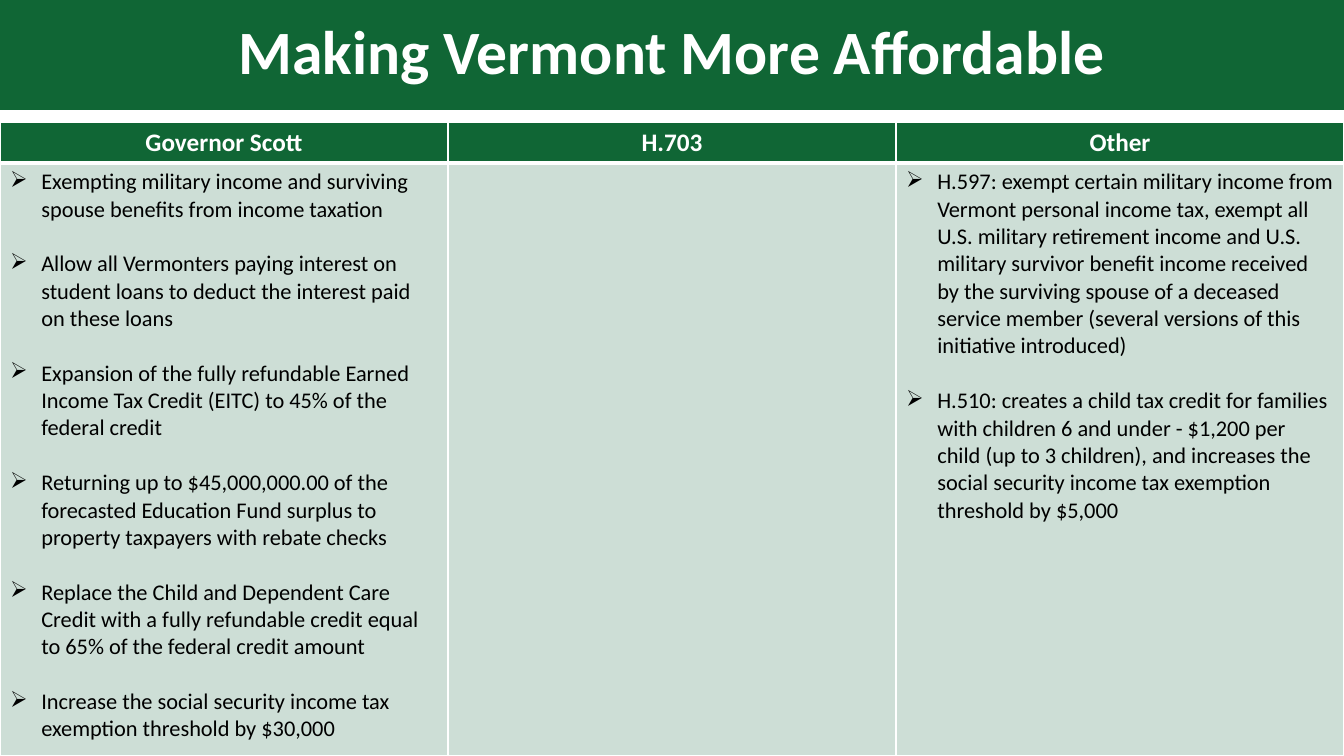
from pptx import Presentation
from pptx.dml.color import RGBColor
from pptx.enum.shapes import MSO_SHAPE
from pptx.enum.text import MSO_ANCHOR, PP_ALIGN
from pptx.oxml.ns import qn
from pptx.util import Inches, Pt
from lxml import etree

RECT = MSO_SHAPE.RECTANGLE
MIDDLE = MSO_ANCHOR.MIDDLE
CENTER, LEFT = PP_ALIGN.CENTER, PP_ALIGN.LEFT

GREEN = RGBColor(0x10, 0x66, 0x35)
PALE_GREEN = RGBColor(0xCD, 0xDE, 0xD6)
WHITE = RGBColor(0xFF, 0xFF, 0xFF)
BLACK = RGBColor(0x00, 0x00, 0x00)

WIDTH, HEIGHT = 13.33, 7.5
TABLE_TOP, HEADER_HEIGHT = 1.21, 0.41

TITLE = {"size": Pt(44), "bold": True, "color": WHITE}
HEADER = {"size": Pt(18), "bold": True, "color": WHITE}
BODY = {"size": Pt(16), "bold": False, "color": BLACK}

COLUMNS = {
    "Governor Scott": [
        "Exempting military income and surviving spouse benefits from income taxation",
        "Allow all Vermonters paying interest on student loans to deduct the interest "
        "paid on these loans",
        "Expansion of the fully refundable Earned Income Tax Credit (EITC) to 45% of "
        "the federal credit",
        "Returning up to $45,000,000.00 of the forecasted Education Fund surplus to "
        "property taxpayers with rebate checks",
        "Replace the Child and Dependent Care Credit with a fully refundable credit "
        "equal to 65% of the federal credit amount",
        "Increase the social security income tax exemption threshold by $30,000",
    ],
    "H.703": [],
    "Other": [
        "H.597: exempt certain military income from Vermont personal income tax, exempt "
        "all U.S. military retirement income and U.S. military survivor benefit income "
        "received by the surviving spouse of a deceased service member (several versions "
        "of this initiative introduced)",
        "H.510: creates a child tax credit for families with children 6 and under - "
        "$1,200 per child (up to 3 children), and increases the social security income "
        "tax exemption threshold by $5,000",
    ],
}


class SlideBuilder:
    font_name = "Calibri"
    bullet = "➢"
    bullet_indent = Inches(0.31)
    bullet_gap = Pt(19.5)

    def __init__(self, slide):
        self.s = slide

    def text(self, p, text, style, align):
        p.alignment = align
        r = p.add_run()
        r.text = text
        r.font.name = self.font_name
        for name, value in style.items():
            if name == "color":
                r.font.color.rgb = value
            else:
                setattr(r.font, name, value)

    def banner(self, text, height):
        sp = self.s.shapes.add_shape(RECT, 0, 0, Inches(WIDTH), Inches(height))
        sp.shadow.inherit = False
        sp.fill.solid()
        sp.fill.fore_color.rgb = GREEN
        sp.line.fill.background()
        tf = sp.text_frame
        tf.word_wrap = True
        tf.vertical_anchor = MIDDLE
        p = tf.paragraphs[0]
        p.line_spacing = 0.9
        self.text(p, text, TITLE, CENTER)

    def bullets(self, tf, items):
        for i, item in enumerate(items):
            p = tf.add_paragraph() if i else tf.paragraphs[0]
            pPr = p._p.get_or_add_pPr()
            pPr.set("marL", str(self.bullet_indent))
            pPr.set("indent", str(-self.bullet_indent))
            etree.SubElement(pPr, qn("a:buChar")).set("char", self.bullet)
            if i:
                p.space_before = self.bullet_gap
            self.text(p, item, BODY, LEFT)

    def borders(self, cell, widths):
        tcPr = cell._tc.get_or_add_tcPr()
        for i, (side, width) in enumerate(widths.items()):
            ln = etree.Element(qn(f"a:ln{side}"), w=str(Pt(width)))
            fill = etree.SubElement(ln, qn("a:solidFill"))
            etree.SubElement(fill, qn("a:srgbClr")).set("val", str(WHITE))
            tcPr.insert(i, ln)

    def table(self, columns):
        height = HEIGHT - TABLE_TOP
        table = self.s.shapes.add_table(
            2, len(columns), 0, Inches(TABLE_TOP), Inches(WIDTH), Inches(height)
        ).table
        table.rows[0].height = Inches(HEADER_HEIGHT)
        table.rows[1].height = Inches(height - HEADER_HEIGHT)
        for col, (heading, items) in enumerate(columns.items()):
            head, body = table.cell(0, col), table.cell(1, col)
            self.text(head.text_frame.paragraphs[0], heading, HEADER, CENTER)
            self.bullets(body.text_frame, items)
            # Thick rule between the header and the body
            for cell, color, top, bottom in ((head, GREEN, 1, 3), (body, PALE_GREEN, 3, 1)):
                cell.fill.solid()
                cell.fill.fore_color.rgb = color
                self.borders(cell, {"L": 1, "R": 1, "T": top, "B": bottom})


def main():
    prs = Presentation()
    prs.slide_width, prs.slide_height = Inches(WIDTH), Inches(HEIGHT)
    builder = SlideBuilder(prs.slides.add_slide(prs.slide_layouts[6]))

    # Title banner
    builder.banner("Making Vermont More Affordable", 1.09)

    # Comparison of proposals
    builder.table(COLUMNS)

    prs.save("out.pptx")


if __name__ == "__main__":
    main()
